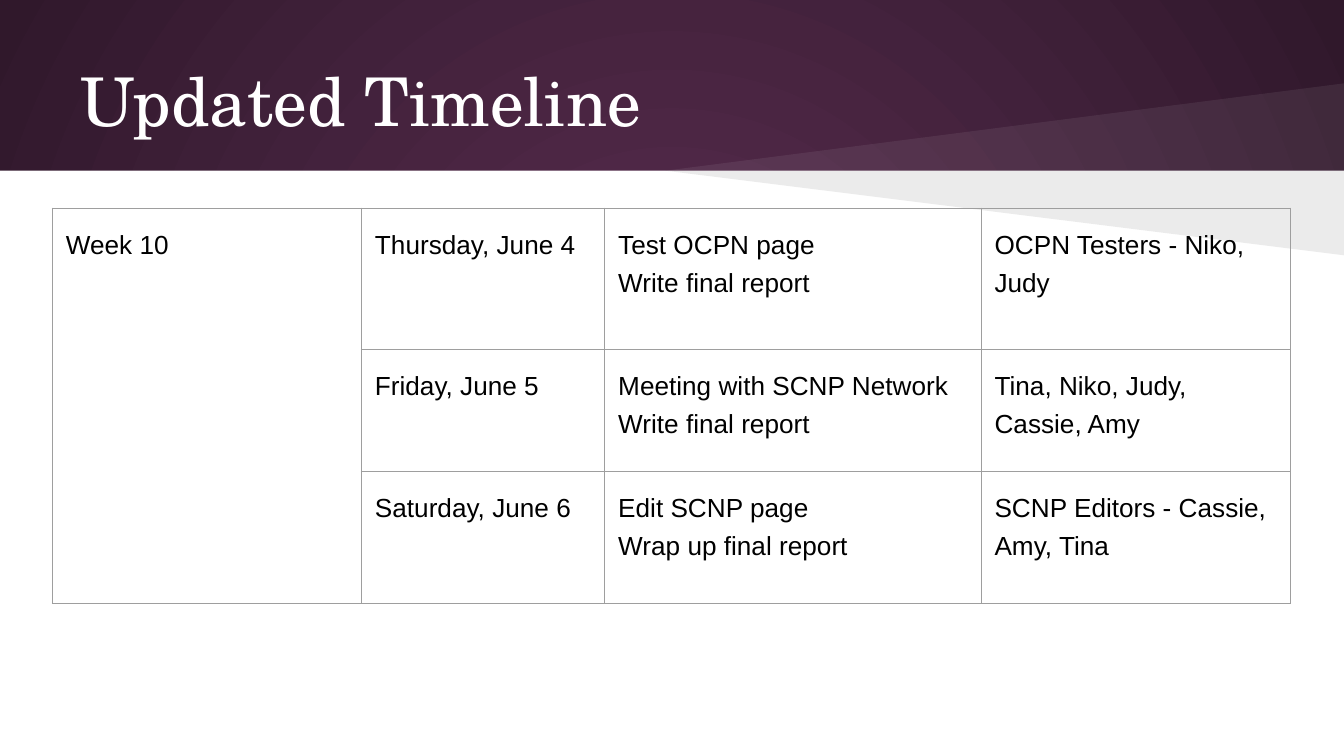
"""Build the Updated Timeline slide with its week 10 schedule table."""
import pptx
import pptx.dml.color
import pptx.enum.shapes
import pptx.enum.text
import pptx.oxml
import pptx.oxml.ns
import pptx.util
from pptx.util import Inches

TITLE = "Updated Timeline"
WEEK = "Week 10"
SCHEDULE = [
    ("Thursday, June 4", ["Test OCPN page", "Write final report"], "OCPN Testers - Niko, Judy"),
    ("Friday, June 5", ["Meeting with SCNP Network", "Write final report"], "Tina, Niko, Judy, Cassie, Amy"),
    ("Saturday, June 6", ["Edit SCNP page", "Wrap up final report"], "SCNP Editors - Cassie, Amy, Tina"),
]
COLUMN_WIDTHS = [2.3, 1.81, 2.8, 2.3]
ROW_HEIGHTS = [1.05, 0.91, 0.98]

WHITE = pptx.dml.color.RGBColor(0xFF, 0xFF, 0xFF)
BLACK = pptx.dml.color.RGBColor(0x00, 0x00, 0x00)
PLUM = pptx.dml.color.RGBColor(0x59, 0x2D, 0x50)
DARK_PLUM = pptx.dml.color.RGBColor(0x30, 0x18, 0x2B)
GREY = pptx.dml.color.RGBColor(0x9E, 0x9E, 0x9E)

WIDTH = 10
HEIGHT = WIDTH * 9 / 16
BAND_BOTTOM = 1.27
WEDGE_TIP = 4.95
WEDGES = [(0.62, WHITE, 7), (1.9, BLACK, 8)]
MARGIN = Inches(0.1)


def find(element, tag):
    return element.find(".//" + pptx.oxml.ns.qn(tag))


def add_xml(parent, tag, content):
    space = pptx.oxml.ns.nsdecls("a")
    name = tag.split()[0]
    parent.append(pptx.oxml.parse_xml(f"<a:{tag} {space}>{content}</a:{name}>"))


def paint_background(page):
    fill = page.background.fill
    fill.gradient()
    for position, (stop, color) in enumerate(zip(fill.gradient_stops, (PLUM, DARK_PLUM))):
        stop.color.rgb = color
        stop.position = position
    gradient = find(page.element, "a:gradFill")
    gradient.remove(find(gradient, "a:lin"))
    center = '<a:fillToRect l="50000" t="50000" r="50000" b="50000"/>'
    add_xml(gradient, 'path path="circle"', center)


def paint_shape(shape, color):
    shape.shadow.inherit = False
    shape.fill.solid()
    shape.fill.fore_color.rgb = color
    shape.line.fill.background()


def add_wedge(page, edge, color, opacity):
    points = [(WIDTH, BAND_BOTTOM), (WEDGE_TIP, BAND_BOTTOM), (WIDTH, edge)]
    corners = [(Inches(x), Inches(y)) for x, y in points]
    builder = page.shapes.build_freeform(*corners[0])
    builder.add_line_segments(corners[1:], close=True)
    wedge = builder.convert_to_shape()
    paint_shape(wedge, color)
    add_xml(find(wedge.element, "a:srgbClr"), f'alpha val="{opacity * 1000}"', "")


def write(frame, lines, size, font, color, spacing):
    frame.word_wrap = True
    for index, line in enumerate(lines):
        para = frame.add_paragraph() if index else frame.paragraphs[0]
        para.alignment = pptx.enum.text.PP_ALIGN.LEFT
        para.line_spacing = spacing
        span = para.add_run()
        span.text = line
        span.font.size = pptx.util.Pt(size)
        span.font.name = font
        span.font.color.rgb = color


def set_title(page):
    box = page.shapes.title
    box.element.getparent().append(box.element)
    box.left, box.top, box.width, box.height = map(Inches, (0.5, 0.23, 9, 0.94))
    frame = box.text_frame
    frame.margin_left = frame.margin_right = frame.margin_top = frame.margin_bottom = MARGIN
    frame.vertical_anchor = pptx.enum.text.MSO_ANCHOR.MIDDLE
    frame.auto_size = pptx.enum.text.MSO_AUTO_SIZE.NONE
    write(frame, [TITLE], 36, "TeX Gyre Schola", WHITE, 1.15)


def format_cell(cell):
    cell.margin_left = cell.margin_right = cell.margin_top = cell.margin_bottom = MARGIN
    properties = cell._tc.get_or_add_tcPr()
    line = f'<a:solidFill><a:srgbClr val="{GREY}"/></a:solidFill>'
    for side in "LRTB":
        add_xml(properties, f'ln{side} w="{pptx.util.Pt(0.75)}"', line)
    cell.fill.background()


def add_schedule(page):
    size = Inches(sum(COLUMN_WIDTHS)), Inches(sum(ROW_HEIGHTS))
    table = page.shapes.add_table(
        len(ROW_HEIGHTS), len(COLUMN_WIDTHS), Inches(0.39), Inches(1.55), *size
    ).table
    table.first_row = table.horz_banding = False
    for column, width in zip(table.columns, COLUMN_WIDTHS):
        column.width = Inches(width)
    for row, height in zip(table.rows, ROW_HEIGHTS):
        row.height = Inches(height)
    for cell in table.iter_cells():
        format_cell(cell)
    table.cell(0, 0).merge(table.cell(len(SCHEDULE) - 1, 0))
    entries = {(0, 0): [WEEK]}
    for row, (day, tasks, people) in enumerate(SCHEDULE):
        entries.update({(row, 1): [day], (row, 2): tasks, (row, 3): [people]})
    for place, lines in entries.items():
        write(table.cell(*place).text_frame, lines, 14, "Arial", BLACK, 1.3)


def main():
    deck = pptx.Presentation()
    deck.slide_width, deck.slide_height = Inches(WIDTH), Inches(HEIGHT)
    page = deck.slides.add_slide(deck.slide_layouts.get_by_name("Title Only"))
    paint_background(page)
    panel = page.shapes.add_shape(
        pptx.enum.shapes.MSO_SHAPE.RECTANGLE,
        0, Inches(BAND_BOTTOM), Inches(WIDTH), Inches(HEIGHT - BAND_BOTTOM),
    )
    paint_shape(panel, WHITE)
    for edge, color, opacity in WEDGES:
        add_wedge(page, edge, color, opacity)
    set_title(page)
    add_schedule(page)
    deck.save("out.pptx")


if __name__ == "__main__":
    main()
